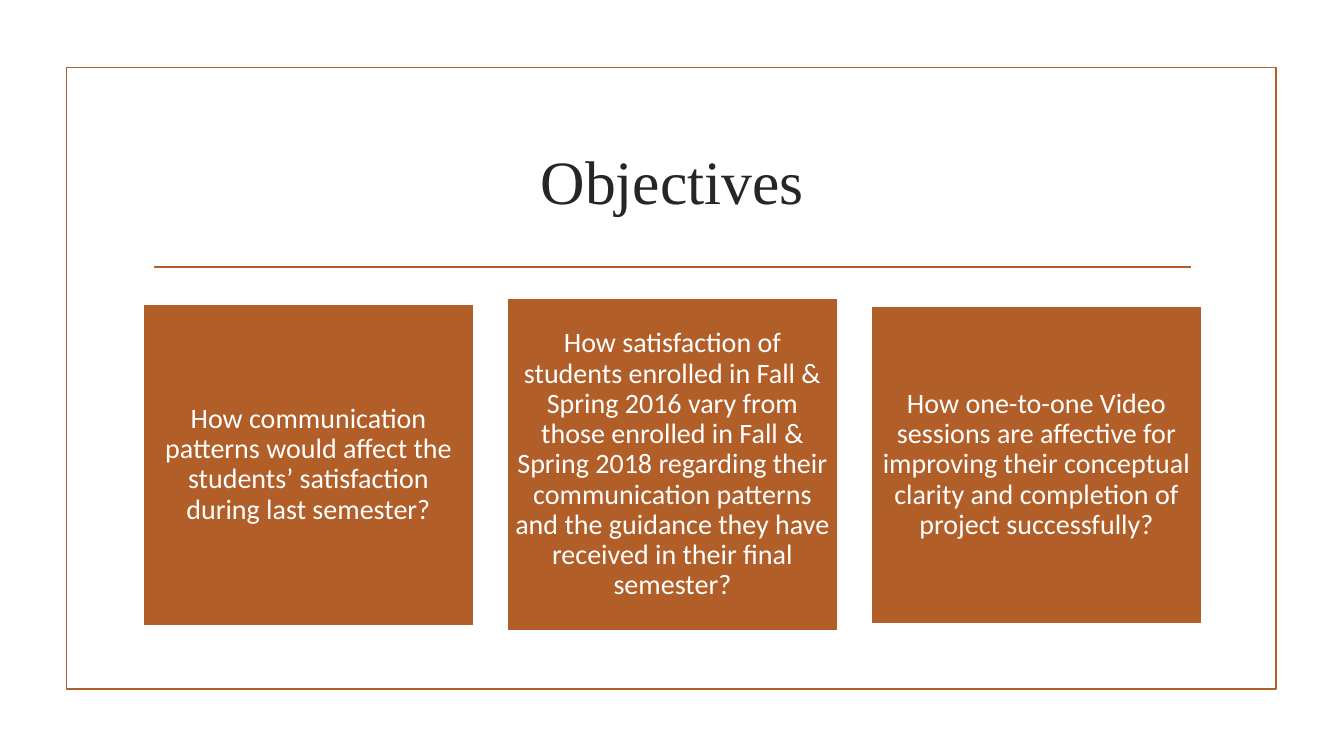
from pptx import Presentation
from pptx.dml.color import RGBColor
from pptx.enum.shapes import MSO_CONNECTOR as Connector, MSO_SHAPE as Shape
from pptx.enum.text import MSO_ANCHOR as Anchor, MSO_AUTO_SIZE as AutoSize, PP_ALIGN as Align
from pptx.oxml.ns import qn
from pptx.util import Inches, Pt
from lxml.etree import SubElement

RUST = RGBColor(0xB1, 0x5E, 0x28)
WHITE = RGBColor(0xFF, 0xFF, 0xFF)
CHARCOAL = RGBColor(0x26, 0x26, 0x26)

# Shares of the slide, in percent
CONTENT_LEFT, CONTENT_WIDTH = 10.65, 78.77
GUTTER = 2.48
CARD_MIDDLE = 61.47

OBJECTIVES = [
    ("How communication patterns would affect the students’ satisfaction "
     "during last semester?", 42.53),
    ("How satisfaction of students enrolled in Fall & Spring 2016 vary from those "
     "enrolled in Fall & Spring 2018 regarding their communication patterns and "
     "the guidance they have received in their final semester?", 44),
    ("How one-to-one Video sessions are affective for improving their conceptual "
     "clarity and completion of project successfully?", 42),
]


class ObjectivesSlide:
    """Holds the style and the slide; every length is a percentage of the slide."""

    line_width = Pt(1.25)
    title_font = {"name": "Times New Roman", "size": Pt(44), "bold": False}
    card_font = {"name": "Calibri", "size": Pt(20)}
    card_margin = Inches(0.08)

    def __init__(self, deck):
        self.deck = deck
        self.slide = deck.slides.add_slide(deck.slide_layouts[5])

    def place(self, *shares):
        """Turn alternating horizontal and vertical percentages into lengths."""
        sizes = (self.deck.slide_width, self.deck.slide_height) * 2
        return [round(size * share / 100) for size, share in zip(sizes, shares)]

    def set_text(self, frame, text, font, color, margin=None):
        settings = {"word_wrap": True, "auto_size": AutoSize.NONE,
                    "vertical_anchor": Anchor.MIDDLE}
        if margin is not None:
            settings |= {f"margin_{side}": margin
                         for side in ("left", "top", "right", "bottom")}
        for name, value in settings.items():
            setattr(frame, name, value)
        frame.text = text
        paragraph = frame.paragraphs[0]
        paragraph.alignment = Align.CENTER
        for name, value in font.items():
            setattr(paragraph.runs[0].font, name, value)
        paragraph.runs[0].font.color.rgb = color
        return paragraph

    def title(self, text, *shares):
        heading = self.slide.shapes.title
        heading.left, heading.top, heading.width, heading.height = self.place(*shares)
        self.set_text(heading.text_frame, text, self.title_font, CHARCOAL)

    def box(self, *shares, line, fill=None):
        box = self.slide.shapes.add_shape(Shape.RECTANGLE, *self.place(*shares))
        box.shadow.inherit = False
        if fill is None:
            box.fill.background()
        else:
            box.fill.solid()
            box.fill.fore_color.rgb = fill
        box.line.color.rgb = line
        box.line.width = self.line_width
        return box

    def rule(self, *ends):
        rule = self.slide.shapes.add_connector(Connector.STRAIGHT, *self.place(*ends))
        rule.line.color.rgb = RUST
        rule.line.width = self.line_width
        SubElement(rule._element.spPr, qn("a:effectLst"))

    def card(self, text, left, width, height):
        card = self.box(left, CARD_MIDDLE - height / 2, width, height,
                        line=WHITE, fill=RUST)
        paragraph = self.set_text(card.text_frame, text, self.card_font, WHITE,
                                  self.card_margin)
        paragraph.line_spacing = 0.9

    def cards(self, objectives):
        count = len(objectives)
        width = (CONTENT_WIDTH - GUTTER * (count - 1)) / count
        for column, (text, height) in enumerate(objectives):
            self.card(text, CONTENT_LEFT + column * (width + GUTTER), width, height)


def main():
    deck = Presentation()
    deck.slide_width, deck.slide_height = Inches(13.33), Inches(7.5)
    page = ObjectivesSlide(deck)
    page.box(4.95, 8.93, 90, 82.27, line=RUST)
    page.rule(11.48, 35.33, 88.6, 35.33)
    page.title("Objectives", CONTENT_LEFT, 14.27, CONTENT_WIDTH, 19.07)
    page.cards(OBJECTIVES)
    deck.save("out.pptx")


if __name__ == "__main__":
    main()
